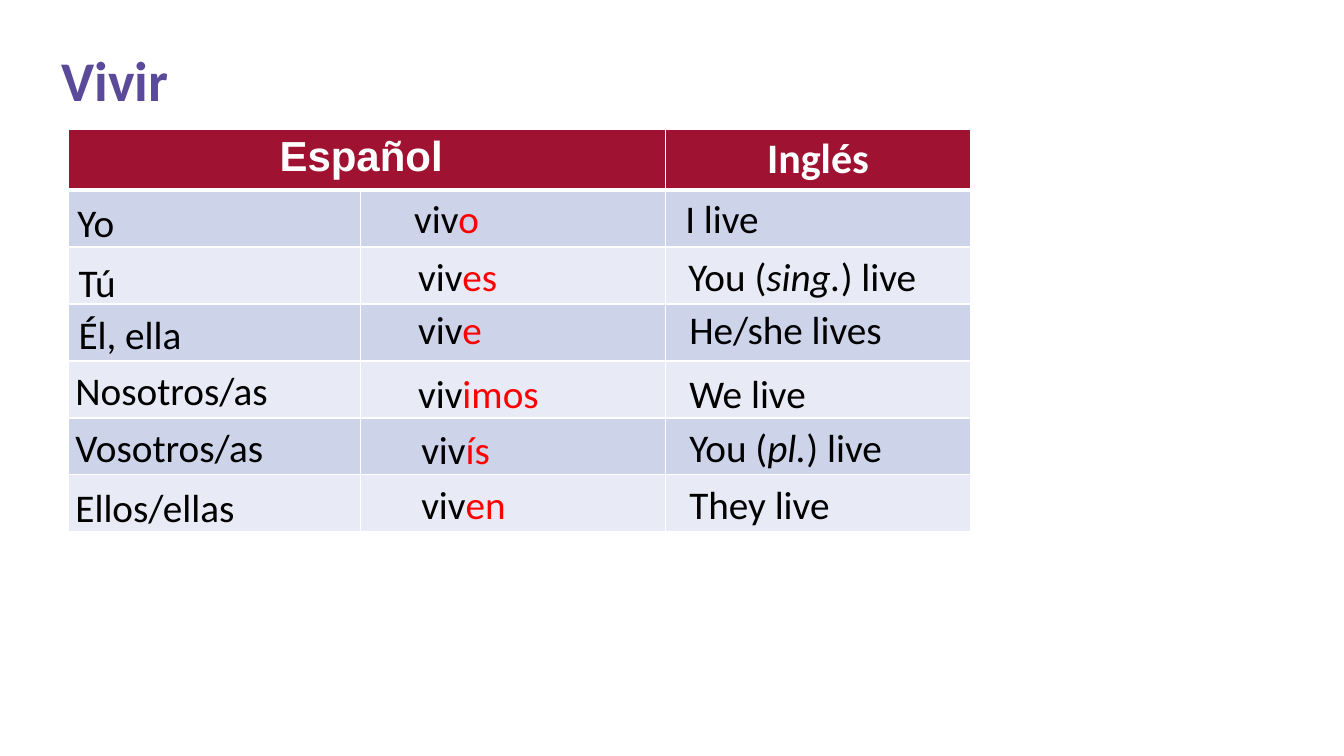
from typing import NamedTuple

from lxml.etree import SubElement
from pptx import Presentation
from pptx.dml.color import RGBColor
from pptx.enum.text import MSO_AUTO_SIZE as Auto, PP_ALIGN as Align
from pptx.oxml.ns import qn
from pptx.util import Pt

BLACK, WHITE, RED = "000000", "FFFFFF", "FF0000"
PURPLE, WINE = "5B499A", "9F1231"
BANDS = ("CDD4EA", "E8EBF5")
COLS = (208.4, 218, 218)
ROWS = (43.6,) + (40.7,) * 6


class Piece(NamedTuple):
    text: str
    color: str = BLACK
    size: float = 28
    font: str = "Calibri"
    bold: bool = False
    italic: bool = False


class Label(NamedTuple):
    left: float
    top: float
    width: float
    words: tuple[Piece, ...]


def verb(left: float, top: float, ending: str) -> Label:
    return Label(left, top, 152.6, (Piece("viv"), Piece(ending, RED)))


def plain(left: float, top: float, width: float, text: str) -> Label:
    return Label(left, top, width, (Piece(text),))


def you(left: float, top: float, width: float, number: str) -> Label:
    words = Piece("You ("), Piece(number, italic=True), Piece(") live")
    return Label(left, top, width, words)


PRONOUNS = (
    plain(48.2, 138.2, 152.6, "Yo"),
    plain(49, 180.7, 190.8, "Tú"),
    plain(49, 218.2, 207.4, "Él, ella"),
    plain(46.8, 257.8, 195.8, "Nosotros/as"),
    plain(46.8, 298.8, 190.8, "Vosotros/as"),
    plain(46.8, 342, 190.8, "Ellos/ellas"),
)
VERBS = (
    verb(288.7, 135.4, "o"),
    verb(291.6, 176.4, "es"),
    verb(291.6, 214.6, "e"),
    verb(291.6, 260.6, "imos"),
    verb(293.8, 300.2, "ís"),
    verb(293.8, 339.8, "en"),
)
ENGLISH = (
    plain(482.4, 135.4, 152.6, "I live"),
    you(484.6, 176.4, 208.8, "sing."),
    plain(485.3, 214.6, 213.1, "He/she lives"),
    plain(485.3, 259.9, 152.6, "We live"),
    you(485.3, 298.8, 226.1, "pl."),
    plain(485.3, 339.8, 152.6, "They live"),
)
TITLE = Label(36.7, 28.8, 828, (Piece("Vivir", PURPLE, 40, bold=True),))
HEADS = {
    0: Piece("Español ", WHITE, 30, "Arial", bold=True),
    2: Piece("Inglés", WHITE, 30, bold=True),
}


def rgb(value: str) -> RGBColor:
    return RGBColor.from_string(value)


def write(para, words: tuple[Piece, ...]) -> None:
    for piece in words:
        run = para.add_run()
        run.text = piece.text
        font = run.font
        font.name, font.size = piece.font, Pt(piece.size)
        font.bold, font.italic = piece.bold, piece.italic
        font.color.rgb = rgb(piece.color)


def draw(slide, label: Label, grow: bool = True) -> None:
    height = 41 if grow else 49
    box = slide.shapes.add_textbox(
        Pt(label.left), Pt(label.top), Pt(label.width), Pt(height))
    frame = box.text_frame
    frame.word_wrap = True
    frame.auto_size = Auto.SHAPE_TO_FIT_TEXT if grow else Auto.NONE
    write(frame.paragraphs[0], label.words)


def edge(cell, side: str, width: float) -> None:
    """Give one side of a cell a white border; call before filling the cell."""
    props = cell._tc.get_or_add_tcPr()
    line = SubElement(props, qn(f"a:ln{side}"), w=str(Pt(width)))
    fill = SubElement(line, qn("a:solidFill"))
    SubElement(fill, qn("a:srgbClr"), val=WHITE)


def grid(slide) -> None:
    table = slide.shapes.add_table(
        len(ROWS), len(COLS), Pt(49), Pt(92.2),
        Pt(sum(COLS)), Pt(sum(ROWS))).table
    for col, width in zip(table.columns, COLS):
        col.width = Pt(width)
    for row, height in zip(table.rows, ROWS):
        row.height = Pt(height)
    for r in range(len(ROWS)):
        for c in range(len(COLS)):
            cell = table.cell(r, c)
            cell.margin_left = cell.margin_right = Pt(6.6)
            cell.margin_top = cell.margin_bottom = Pt(3.3)
            edge(cell, "L", 1)
            edge(cell, "R", 1)
            edge(cell, "T", 3 if r == 1 else 1)
            edge(cell, "B", 3 if r == 0 else 1)
            cell.fill.solid()
            cell.fill.fore_color.rgb = rgb(BANDS[(r - 1) % 2] if r else WINE)
    table.cell(0, 0).merge(table.cell(0, 1))
    for c, head in HEADS.items():
        para = table.cell(0, c).text_frame.paragraphs[0]
        para.alignment = Align.CENTER
        write(para, (head,))


def main() -> None:
    deck = Presentation()
    deck.slide_width, deck.slide_height = Pt(960), Pt(540)
    slide = deck.slides.add_slide(deck.slide_layouts[6])
    grid(slide)
    for label in PRONOUNS + VERBS + ENGLISH:
        draw(slide, label)
    draw(slide, TITLE, grow=False)
    deck.save("out.pptx")


if __name__ == "__main__":
    main()
